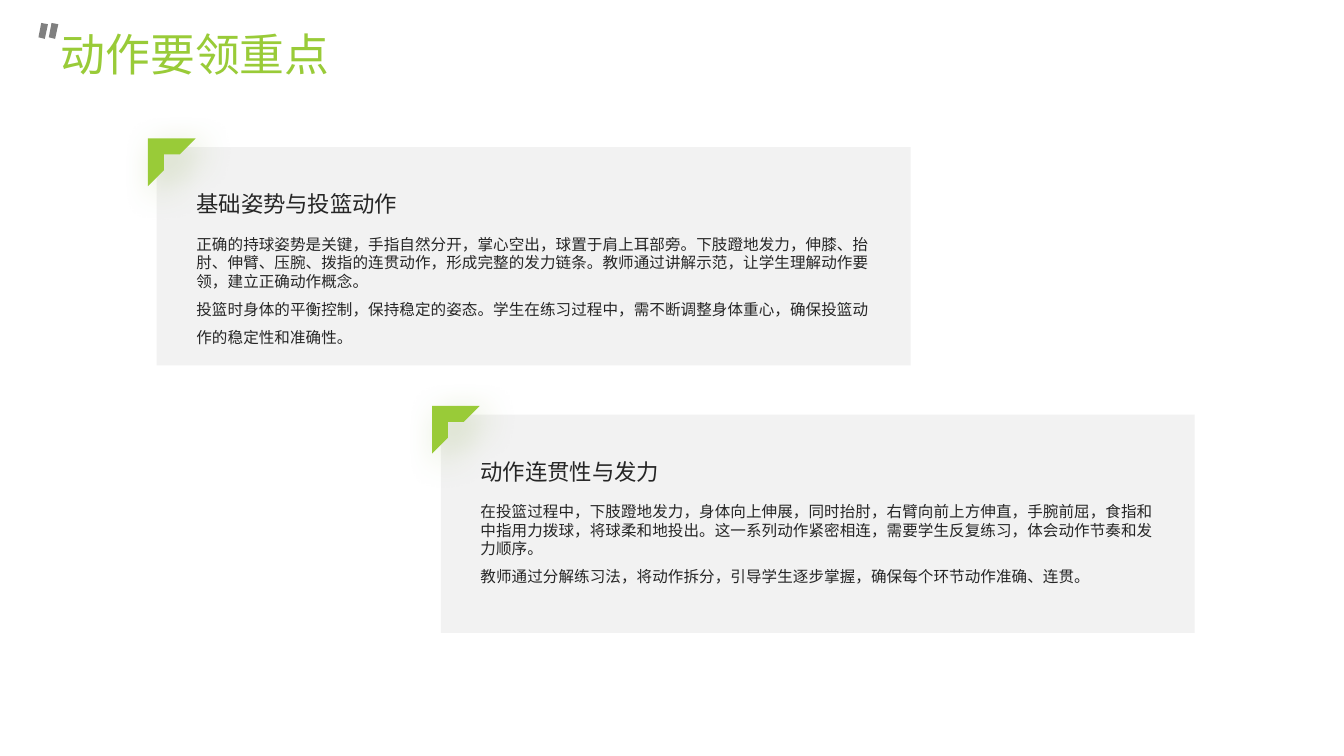
from dataclasses import dataclass

from lxml.etree import SubElement
from pptx import Presentation
from pptx.dml.color import RGBColor
from pptx.enum.shapes import MSO_SHAPE as Shape
from pptx.enum.text import MSO_ANCHOR as Anchor, MSO_AUTO_SIZE as AutoSize, PP_ALIGN as Align
from pptx.oxml.ns import qn
from pptx.util import Cm, Pt


@dataclass(frozen=True)
class Theme:
    font: str = "Noto Sans CJK SC"
    accent: str = "99CB38"
    shadow: str = "739A28"
    panel: str = "F2F2F2"
    ink: str = "262626"
    quote: str = "808080"
    title_size: float = 32
    heading_size: float = 16
    body_size: float = 11.1


THEME = Theme()
CARD_SIZE = (19, 5.5)
CARDS = [
    (3.95, 3.71, "基础姿势与投篮动作", [
        "正确的持球姿势是关键，手指自然分开，掌心空出，球置于肩上耳部旁。下肢蹬地发力，伸膝、抬肘、伸臂、压腕、拨指的连贯动作，形成完整的发力链条。教师通过讲解示范，让学生理解动作要领，建立正确动作概念。",
        "投篮时身体的平衡控制，保持稳定的姿态。学生在练习过程中，需不断调整身体重心，确保投篮动作的稳定性和准确性。",
    ]),
    (11.11, 10.45, "动作连贯性与发力", [
        "在投篮过程中，下肢蹬地发力，身体向上伸展，同时抬肘，右臂向前上方伸直，手腕前屈，食指和中指用力拨球，将球柔和地投出。这一系列动作紧密相连，需要学生反复练习，体会动作节奏和发力顺序。",
        "教师通过分解练习法，将动作拆分，引导学生逐步掌握，确保每个环节动作准确、连贯。",
    ]),
]


def paint(shape, color):
    shape.shadow.inherit = False
    shape.fill.solid()
    shape.fill.fore_color.rgb = RGBColor.from_string(color)
    shape.line.fill.background()


def place(shape, left, top, width, height):
    shape.left, shape.top = Cm(left), Cm(top)
    shape.width, shape.height = Cm(width), Cm(height)


def write(shape, lines, *, size, color, spacings, anchor=Anchor.TOP):
    """Fill the shape with one paragraph per line, each with its own line spacing."""
    frame = shape.text_frame
    frame.word_wrap = True
    frame.auto_size = AutoSize.NONE
    frame.vertical_anchor = anchor
    frame.margin_left = frame.margin_right = frame.margin_top = frame.margin_bottom = 0
    for index, (line, spacing) in enumerate(zip(lines, spacings)):
        para = frame.add_paragraph() if index else frame.paragraphs[0]
        para.alignment = Align.LEFT
        para.line_spacing = spacing
        para.space_before = Pt(0)
        span = para.add_run()
        span.text = line
        span.font.size = Pt(size)
        span.font.name = THEME.font
        span.font.color.rgb = RGBColor.from_string(color)
        SubElement(span.font._element, qn("a:ea"), typeface=THEME.font)


def cast_shadow(shape):
    """Add a soft shadow towards the lower right."""
    effects = shape._element.spPr.find(qn("a:effectLst"))
    outer = SubElement(effects, qn("a:outerShdw"), blurRad=str(Pt(25)), dist=str(Pt(10)),
                       dir=str(45 * 60000), algn="tl", rotWithShape="0")
    color = SubElement(outer, qn("a:srgbClr"), val=THEME.shadow)
    SubElement(color, qn("a:alpha"), val="30000")


def add_header(page, left, top, width, height):
    title = page.shapes.title
    place(title, left + 0.56, top + 0.03, width - 0.56, height)
    write(title, ["动作要领重点"], size=THEME.title_size, color=THEME.accent,
          spacings=[1.2], anchor=Anchor.MIDDLE)

    quote = None
    for x in (left + 0.07, left + 0.33):
        corners = [(x, top), (x + 0.17, top + 0.03), (x + 0.09, top + 0.4), (x - 0.07, top + 0.36)]
        points = [(Cm(a), Cm(b)) for a, b in corners]
        if quote is None:
            quote = page.shapes.build_freeform(*points[0])
        else:
            quote.move_to(*points[0])
        quote.add_line_segments(points[1:], close=True)
    paint(quote.convert_to_shape(), THEME.quote)


def add_card(page, left, top, width, height, heading, lines):
    panel = page.shapes.add_shape(Shape.RECTANGLE, Cm(left), Cm(top), Cm(width), Cm(height))
    paint(panel, THEME.panel)

    corner = page.shapes.add_shape(Shape.HALF_FRAME, Cm(left - 0.22), Cm(top - 0.22), Cm(1.2), Cm(1.2))
    paint(corner, THEME.accent)
    cast_shadow(corner)

    text_left, text_width = Cm(left + 1), Cm(width - 2)
    body = page.shapes.add_textbox(text_left, Cm(top + 2.2), text_width, Cm(3))
    write(body, lines, size=THEME.body_size, color=THEME.ink, spacings=[1.0, 1.5])
    label = page.shapes.add_textbox(text_left, Cm(top + 0.43), text_width, Cm(1.78))
    write(label, [heading], size=THEME.heading_size, color=THEME.ink, spacings=[1.3],
          anchor=Anchor.MIDDLE)


def main():
    deck = Presentation()
    deck.slide_width, deck.slide_height = Cm(33.87), Cm(19.05)
    page = deck.slides.add_slide(deck.slide_layouts[5])
    add_header(page, 0.97, 0.58, 28.45, 1.19)
    for left, top, heading, lines in CARDS:
        add_card(page, left, top, *CARD_SIZE, heading, lines)
    deck.save("out.pptx")


if __name__ == "__main__":
    main()
